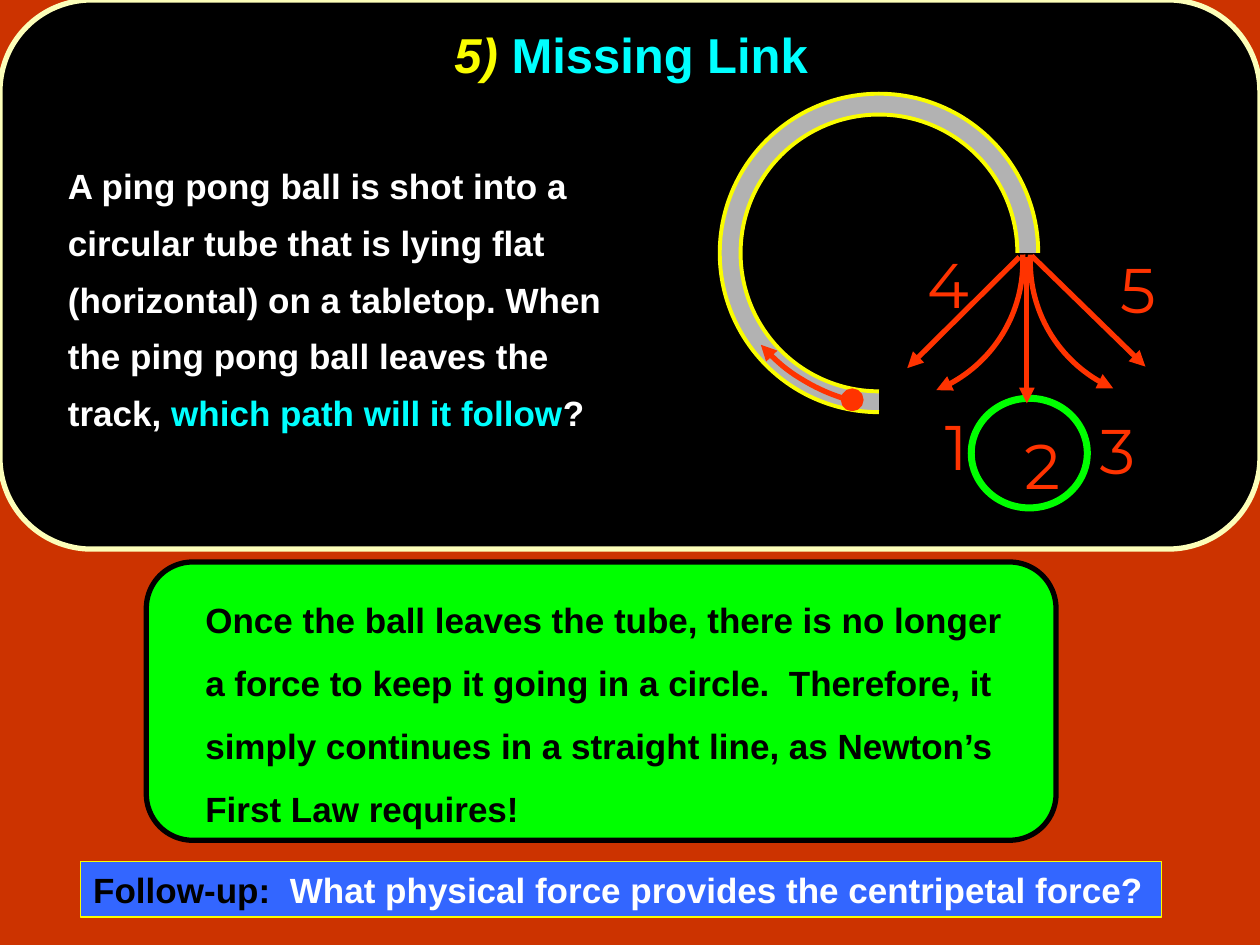
from lxml import etree
from pptx import Presentation, util as u
from pptx.dml.color import RGBColor
from pptx.enum import shapes, text
from pptx.oxml.ns import qn

RUST = RGBColor(0xCC, 0x33, 0x00)
RED = RGBColor(0xFF, 0x33, 0x00)
BLACK = RGBColor(0x00, 0x00, 0x00)
WHITE = RGBColor(0xFF, 0xFF, 0xFF)
CREAM = RGBColor(0xFC, 0xFE, 0xB9)
YELLOW = RGBColor(0xFA, 0xFD, 0x00)
CYAN = RGBColor(0x00, 0xFF, 0xFF)
GREEN = RGBColor(0x00, 0xFF, 0x00)
GREY = RGBColor(0xB2, 0xB2, 0xB2)
BLUE = RGBColor(0x33, 0x66, 0xFF)
SHAPE = shapes.MSO_SHAPE


class Deck:
    """Draws styled elements on the current slide, with lengths in centimetres."""

    def __init__(self, width, height, background):
        self.prs = Presentation()
        self.prs.slide_width, self.prs.slide_height = u.Cm(width), u.Cm(height)
        self.s = self.prs.slides.add_slide(self.prs.slide_layouts[6])
        self.s.background.fill.solid()
        self.s.background.fill.fore_color.rgb = background
        self.bold = {"name": "Arial", "size": u.Pt(20), "bold": True}
        self.digit = {"name": "Montserrat", "size": u.Pt(36)}

    def line(self, sp, color, width, arrow=None):
        sp.line.color.rgb = color
        sp.line.width = u.Pt(width)
        if arrow:
            ln = sp._element.spPr.find(qn("a:ln"))
            etree.SubElement(ln, qn(f"a:{arrow}"), type="triangle")

    def shape(self, kind, box, fill, color, width, arrow=None):
        sp = self.s.shapes.add_shape(kind, *map(u.Cm, box))
        sp.shadow.inherit = False
        if fill is None:
            sp.fill.background()
        else:
            sp.fill.solid()
            sp.fill.fore_color.rgb = fill
        self.line(sp, color, width, arrow)
        return sp

    def arc(self, x, y, radius, start, end, fill, color, width, arrow=None):
        box = (x - radius, y - radius, 2 * radius, 2 * radius)
        sp = self.shape(SHAPE.ARC, box, fill, color, width, arrow)
        for i, angle in enumerate((start, end)):
            sp.adjustments[i] = angle * 0.6

    def arrow(self, x1, y1, x2, y2):
        sp = self.s.shapes.add_connector(
            shapes.MSO_CONNECTOR.STRAIGHT, *map(u.Cm, (x1, y1, x2, y2)))
        self.line(sp, RED, 3, "tailEnd")
        etree.SubElement(sp._element.spPr, qn("a:effectLst"))

    def label(self, sp, runs, font, para=None, indent=0, frame=None):
        tf = sp.text_frame
        for key, value in {"word_wrap": True, **(frame or {})}.items():
            setattr(tf, key, value)
        p = tf.paragraphs[0]
        for key, value in (para or {}).items():
            setattr(p, key, value)
        if indent:
            p._p.get_or_add_pPr().set("marL", str(u.Cm(indent)))
        for words, color, extra in runs:
            r = p.add_run()
            r.text = words
            r.font.color.rgb = color
            for key, value in {**font, **extra}.items():
                setattr(r.font, key, value)

    def textbox(self, box, *args, **kwargs):
        self.label(self.s.shapes.add_textbox(*map(u.Cm, box)), *args, **kwargs)


def main():
    d = Deck(25.4, 19.05, RUST)
    center = {"alignment": text.PP_ALIGN.CENTER}
    middle = {"vertical_anchor": text.MSO_ANCHOR.MIDDLE}

    d.shape(SHAPE.ROUNDED_RECTANGLE, (0, 0, 25.4, 11.07), BLACK, CREAM, 3)
    d.textbox((2.59, 0, 20.27, 2.34),
              [("5) ", YELLOW, {"italic": True}), ("Missing Link", CYAN, {})],
              {**d.bold, "size": u.Pt(28)}, {**center, "line_spacing": 0.9}, frame=middle)
    d.shape(SHAPE.OVAL, (19.58, 8.03, 2.34, 2.21), None, GREEN, 4)

    d.shape(SHAPE.ROUNDED_RECTANGLE, (2.95, 11.33, 18.34, 5.61), GREEN, BLACK, 3)
    d.textbox((2.77, 11.51, 17.91, 5.92),
              [("Once the ball leaves the tube, there is no longer a force to keep it "
                "going in a circle.  Therefore, it simply continues in a straight line, "
                "as Newton’s First Law requires!", BLACK, {})],
              d.bold, {"line_spacing": 1.5, "space_before": u.Pt(6)}, indent=1.12)
    d.textbox((0, 2.9, 12.6, 6.81),
              [("A ping pong ball is shot into a circular tube that is lying flat "
                "(horizontal) on a tabletop. When the ping pong ball leaves the track, ",
                WHITE, {}),
               ("which path will it follow", CYAN, {}), ("?", WHITE, {})],
              d.bold, {"line_spacing": 1.35, "space_before": u.Pt(6)}, indent=1.12)

    for radius, fill in ((3.21, GREY), (2.79, BLACK)):
        d.arc(17.72, 5.1, radius, 90, 0, fill, YELLOW, 2.25)
    d.shape(SHAPE.OVAL, (16.99, 7.87, 0.38, 0.38), RED, RED, 2.25)
    for x, y, radius, start, end, arrow in (
            (17.83, 5.28, 2.79, 357, 68, "tailEnd"),
            (23.55, 5.28, 2.78, 113.5, 183, "headEnd"),
            (18.11, 4.5, 3.7, 108, 138.5, "tailEnd")):
        d.arc(x, y, radius, start, end, None, RED, 3, arrow)
    for ends in ((20.7, 5.18, 20.7, 8.13), (20.55, 5.18, 18.29, 7.42),
                 (20.8, 5.16, 23.09, 7.39)):
        d.arrow(*ends)
    for digit, x, y in (("1", 18.8, 8.1), ("2", 20.4, 8.48), ("3", 21.92, 8.18),
                        ("4", 18.44, 4.83), ("5", 22.33, 4.93)):
        d.textbox((x, y, 0.71, 1.24), [(digit, RED, {})], d.digit, center,
                  frame={"word_wrap": False})

    bar = d.shape(SHAPE.RECTANGLE, (1.63, 17.37, 21.79, 1.12), BLUE, YELLOW, 0.75)
    d.label(bar, [("Follow-up:", BLACK, {}),
                  ("  What physical force provides the centripetal force?", WHITE, {})],
            d.bold, {"alignment": text.PP_ALIGN.LEFT}, frame=middle)
    d.prs.save("out.pptx")


if __name__ == "__main__":
    main()
